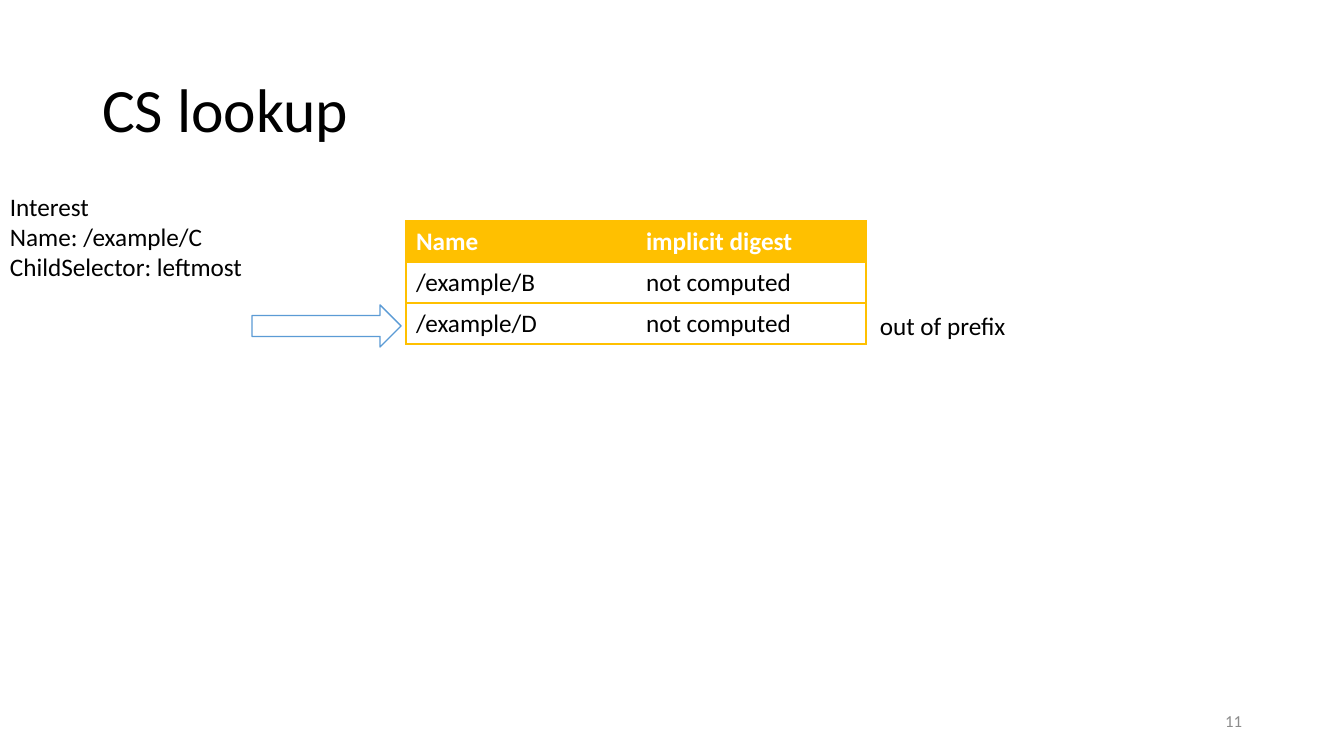
import pptx
import pptx.util
import pptx.dml.color
import pptx.enum.shapes
import pptx.enum.text
import pptx.oxml.ns
import lxml.etree

RGB = pptx.dml.color.RGBColor
ALIGN = pptx.enum.text.PP_ALIGN
ANCHOR = pptx.enum.text.MSO_ANCHOR
BLACK = RGB(0x00, 0x00, 0x00)
WHITE = RGB(0xFF, 0xFF, 0xFF)
GOLD = RGB(0xFF, 0xC0, 0x00)
BLUE = RGB(0x5B, 0x9B, 0xD5)
GREY = RGB(0x8C, 0x8C, 0x8C)
SCALE = 914400 / 100.8


def box(*px):
    return [pptx.util.Emu(round(v * SCALE)) for v in px]


def write(tf, lines, size=18, color=BLACK, bold=False, align=ALIGN.LEFT):
    for i, line in enumerate(lines):
        p = tf.add_paragraph() if i else tf.paragraphs[0]
        p.alignment = align
        r = p.add_run()
        r.text = line
        r.font.name = "Calibri"
        r.font.size = pptx.util.Pt(size)
        r.font.bold = bold
        r.font.color.rgb = color


prs = pptx.Presentation()
prs.slide_width, prs.slide_height = box(1344, 756)
s = prs.slides.add_slide(prs.slide_layouts[5])

title = s.shapes.title
title.left, title.top, title.width, title.height = box(92, 40, 1159, 146)
title.text_frame.vertical_anchor = ANCHOR.MIDDLE
write(title.text_frame, ["CS lookup"], 44)
title.text_frame.paragraphs[0].line_spacing = 0.9

interest = ["Interest", "Name: /example/C", "ChildSelector: leftmost"]
for lines, area in [(interest, (0, 186, 256, 102)), (["out of prefix"], (870, 305, 147, 40))]:
    tf = s.shapes.add_textbox(*box(*area)).text_frame
    tf.word_wrap = False
    tf.auto_size = pptx.enum.text.MSO_AUTO_SIZE.SHAPE_TO_FIT_TEXT
    write(tf, lines)

rows = [
    ("Name", "implicit digest"),
    ("/example/B", "not computed"),
    ("/example/D", "not computed"),
]
tbl = s.shapes.add_table(3, 2, *box(406, 221, 460, 123)).table
tbl.horz_banding = False
for i, row in enumerate(rows):
    for j, text in enumerate(row):
        cell = tbl.cell(i, j)
        tcPr = cell._tc.get_or_add_tcPr()
        inner = "R" if j == 0 else "L"
        for side in "LRTB":
            ln = lxml.etree.SubElement(tcPr, pptx.oxml.ns.qn("a:ln" + side), w="12700")
            if side == inner:
                lxml.etree.SubElement(ln, pptx.oxml.ns.qn("a:noFill"))
            else:
                fill = lxml.etree.SubElement(ln, pptx.oxml.ns.qn("a:solidFill"))
                lxml.etree.SubElement(fill, pptx.oxml.ns.qn("a:srgbClr"), val=str(GOLD))
        cell.fill.solid()
        cell.fill.fore_color.rgb = GOLD if i == 0 else WHITE
        write(cell.text_frame, [text], color=WHITE if i == 0 else BLACK, bold=i == 0)

tf = s.shapes.add_textbox(*box(950, 701, 302, 40)).text_frame
tf.word_wrap = True
tf.vertical_anchor = ANCHOR.MIDDLE
write(tf, ["11"], 12, GREY, align=ALIGN.RIGHT)

arrow = s.shapes.add_shape(pptx.enum.shapes.MSO_SHAPE.RIGHT_ARROW, *box(252, 305, 149, 42))
arrow.shadow.inherit = False
arrow.fill.solid()
arrow.fill.fore_color.rgb = WHITE
arrow.line.color.rgb = BLUE
arrow.line.width = pptx.util.Pt(1)

prs.save("out.pptx")
